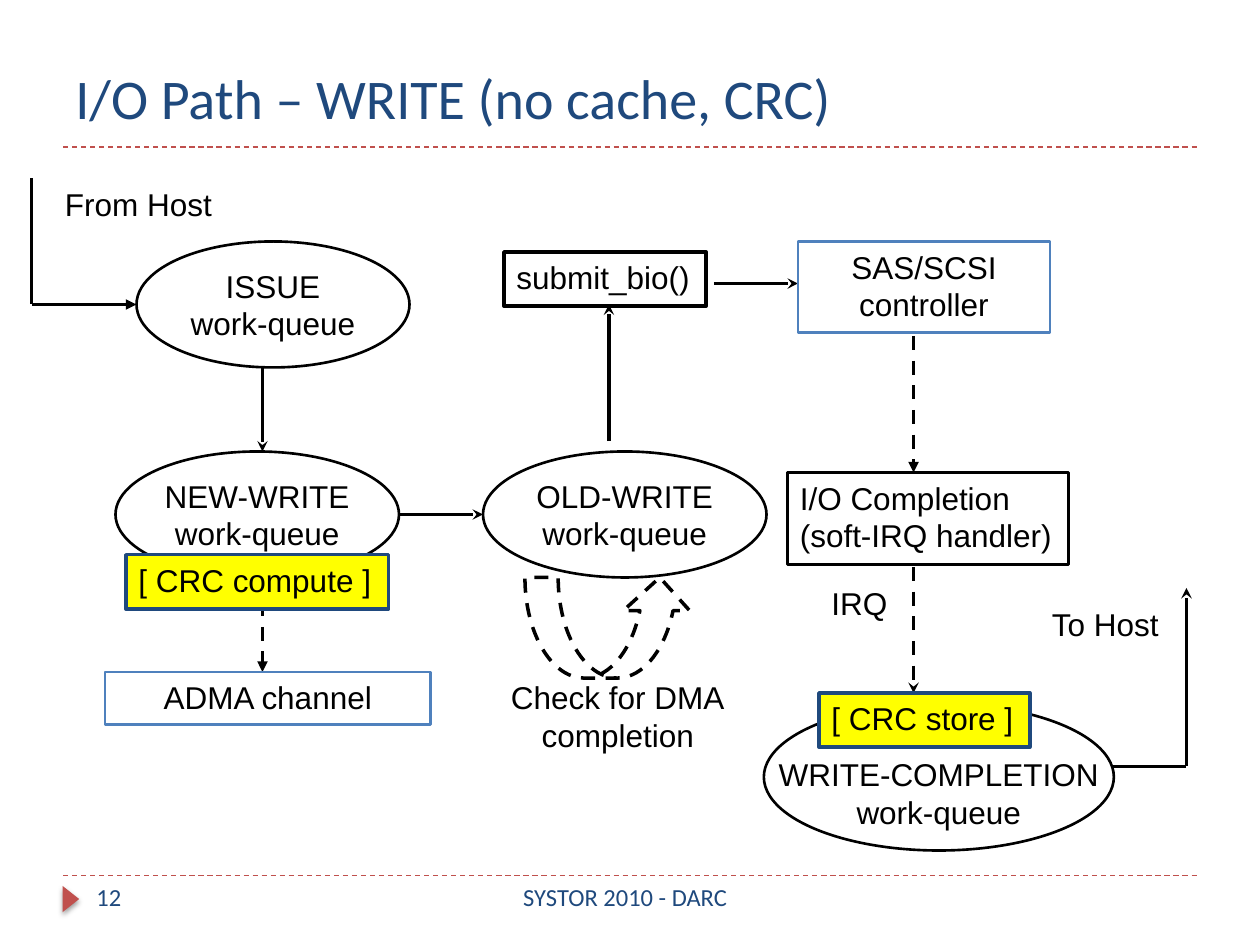
import pptx
import pptx.util
import pptx.dml.color
import pptx.enum.dml
import pptx.enum.shapes
import pptx.enum.text
import pptx.oxml
import pptx.oxml.ns

Pt = pptx.util.Pt
SHAPE = pptx.enum.shapes.MSO_SHAPE
ALIGN = pptx.enum.text.PP_ALIGN
ANCHOR = pptx.enum.text.MSO_ANCHOR

BLACK, NAVY, BLUE, RED, YELLOW = "000000", "1F497D", "4F81BD", "C0504D", "FFFF00"

# Every position is left, top, width, height in points.
# text, position, size, align, anchor
PAGE_TEXTS = [
    ("I/O Path – WRITE (no cache, CRC)", (36, 18, 648, 60), 32, ALIGN.LEFT, ANCHOR.BOTTOM),
    ("12", (48, 500.4, 156, 28.8), 14, ALIGN.LEFT, ANCHOR.TOP),
    ("SYSTOR 2010 - DARC", (210, 500.4, 294.5, 28.8), 14, ALIGN.CENTER, ANCHOR.TOP),
]

# from, to, head ("" for none), dashed
ARROWS = [
    ((18, 102), (18, 174), "", False),
    ((18, 174), (78, 174), "triangle", False),
    ((150, 210), (150, 258), "stealth", False),
    ((150, 330), (150, 384), "triangle", True),
    ((228, 294), (276, 294), "stealth", False),
    ((348, 252), (348, 174), "stealth", False),
    ((408, 162), (456, 162), "stealth", False),
    ((522, 192), (522, 270), "triangle", True),
    ((522, 324), (522, 396), "stealth", True),
    ((636, 438), (678, 438), "", False),
    ((678, 438), (678, 336), "stealth", False),
]

# lines, position, top inset
QUEUES = [
    (["ISSUE", "work-queue"], (78, 138, 156, 72), 3.6),
    (["NEW-WRITE", "work-queue"], (66, 258, 162, 72), 3.6),
    (["OLD-WRITE", "work-queue"], (276, 258, 162, 72), 3.6),
    (["WRITE-COMPLETION", "work-queue"], (436.5, 402, 200, 84), 21.6),
]

# lines, position, align, line colour, line width, fill
BOXES = [
    (["submit_bio()"], (288, 144, 115.5, 31), ALIGN.LEFT, BLACK, 2, None),
    (["SAS/SCSI", "controller"], (456, 138, 144, 52), ALIGN.CENTER, BLUE, 1.5, None),
    (["I/O Completion", "(soft-IRQ handler)"], (450, 270, 160.5, 52.5), ALIGN.LEFT, BLACK, 2, None),
    (["ADMA channel"], (60, 384, 186, 30), ALIGN.CENTER, BLUE, 1.5, None),
    (["[ CRC store ]"], (468, 396, 120.5, 31), ALIGN.LEFT, NAVY, 2, YELLOW),
    (["[ CRC compute ]"], (72, 317, 150, 31), ALIGN.LEFT, NAVY, 2, YELLOW),
]

LABELS = [
    (["From Host"], (30, 102, 98.5, 29), ALIGN.LEFT),
    (["IRQ"], (468, 330, 46.5, 29), ALIGN.LEFT),
    (["To Host"], (594, 342, 78, 29), ALIGN.LEFT),
    (["Check for DMA", "completion"], (282, 384, 142, 50.5), ALIGN.CENTER),
]

RULES_Y = [84, 500.4]
CHECK_LOOP = (300, 330, 96, 57.5)
PAGE_MARK = (33, 509, 15, 9.5)


def rgb(value):
    return pptx.dml.color.RGBColor.from_string(value)


def put_text(sp, lines, size=18, font="Arial", color=BLACK, align=ALIGN.CENTER,
             anchor=ANCHOR.TOP, wrap=False):
    tf = sp.text_frame
    tf.word_wrap = wrap
    tf.vertical_anchor = anchor
    tf.text = "\n".join(lines)
    for p in tf.paragraphs:
        p.alignment = align
        p.font.size = Pt(size)
        p.font.name = font
        p.font.color.rgb = rgb(color)
    return tf


def style_line(line, color, width, dashed=False):
    line.color.rgb = rgb(color)
    line.width = Pt(width)
    if dashed:
        line.dash_style = pptx.enum.dml.MSO_LINE.DASH


def add_shape(s, kind, at, color=None, width=1.5, fill=None, dashed=False):
    sp = s.shapes.add_shape(kind, *map(Pt, at))
    sp.shadow.inherit = False
    if fill:
        sp.fill.solid()
        sp.fill.fore_color.rgb = rgb(fill)
    else:
        sp.fill.background()
    if color:
        style_line(sp.line, color, width, dashed)
    else:
        sp.line.fill.background()
    return sp


def add_line(s, start, end, color=BLACK, width=2, dashed=False, head=""):
    cx = s.shapes.add_connector(pptx.enum.shapes.MSO_CONNECTOR.STRAIGHT,
                                *map(Pt, start + end))
    style_line(cx.line, color, width, dashed)
    if head:
        pptx.oxml.ns.qn("a:tailEnd")
        ln = cx.line._get_or_add_ln()
        ln.append(pptx.oxml.parse_xml(
            f'<a:tailEnd {pptx.oxml.ns.nsdecls("a")} type="{head}"/>'))
    cx._element.spPr.append(pptx.oxml.parse_xml(
        f'<a:effectLst {pptx.oxml.ns.nsdecls("a")}/>'))


def add_text(s, at):
    return s.shapes.add_textbox(*map(Pt, at))


def add_page_mark(s):
    """Red triangle with a soft shadow beside the slide number."""
    sp = add_shape(s, SHAPE.ISOSCELES_TRIANGLE, PAGE_MARK, fill=RED)
    sp.rotation = 90
    effects = sp._element.spPr.find(pptx.oxml.ns.qn("a:effectLst"))
    effects.append(pptx.oxml.parse_xml(
        f'<a:outerShdw {pptx.oxml.ns.nsdecls("a")} blurRad="{Pt(3.1)}" dist="{Pt(1.6)}" '
        'dir="5400000" rotWithShape="0"><a:srgbClr val="000000">'
        '<a:alpha val="38000"/></a:srgbClr></a:outerShdw>'))


def main():
    prs = pptx.Presentation()
    prs.slide_width, prs.slide_height = Pt(720), Pt(540)
    s = prs.slides.add_slide(prs.slide_layouts[6])

    for y in RULES_Y:
        add_line(s, (36, y), (684, y), RED, 0.75, dashed=True)
    add_page_mark(s)
    for text, at, size, align, anchor in PAGE_TEXTS:
        put_text(add_text(s, at), [text], size, "Calibri", NAVY, align, anchor, wrap=True)

    for start, end, head, dashed in ARROWS:
        add_line(s, start, end, dashed=dashed, head=head)
    for lines, at, inset in QUEUES:
        sp = add_shape(s, SHAPE.OVAL, at, BLACK)
        put_text(sp, lines, anchor=ANCHOR.MIDDLE).margin_top = Pt(inset)

    loop = add_shape(s, SHAPE.CURVED_UP_ARROW, CHECK_LOOP, BLACK, 2, dashed=True)
    for i, value in enumerate((0.33, 0.66, 0.33)):
        loop.adjustments[i] = value

    for lines, at, align, color, width, fill in BOXES:
        put_text(add_shape(s, SHAPE.RECTANGLE, at, color, width, fill), lines, align=align)
    for lines, at, align in LABELS:
        put_text(add_text(s, at), lines, align=align)

    prs.save("out.pptx")


if __name__ == "__main__":
    main()
